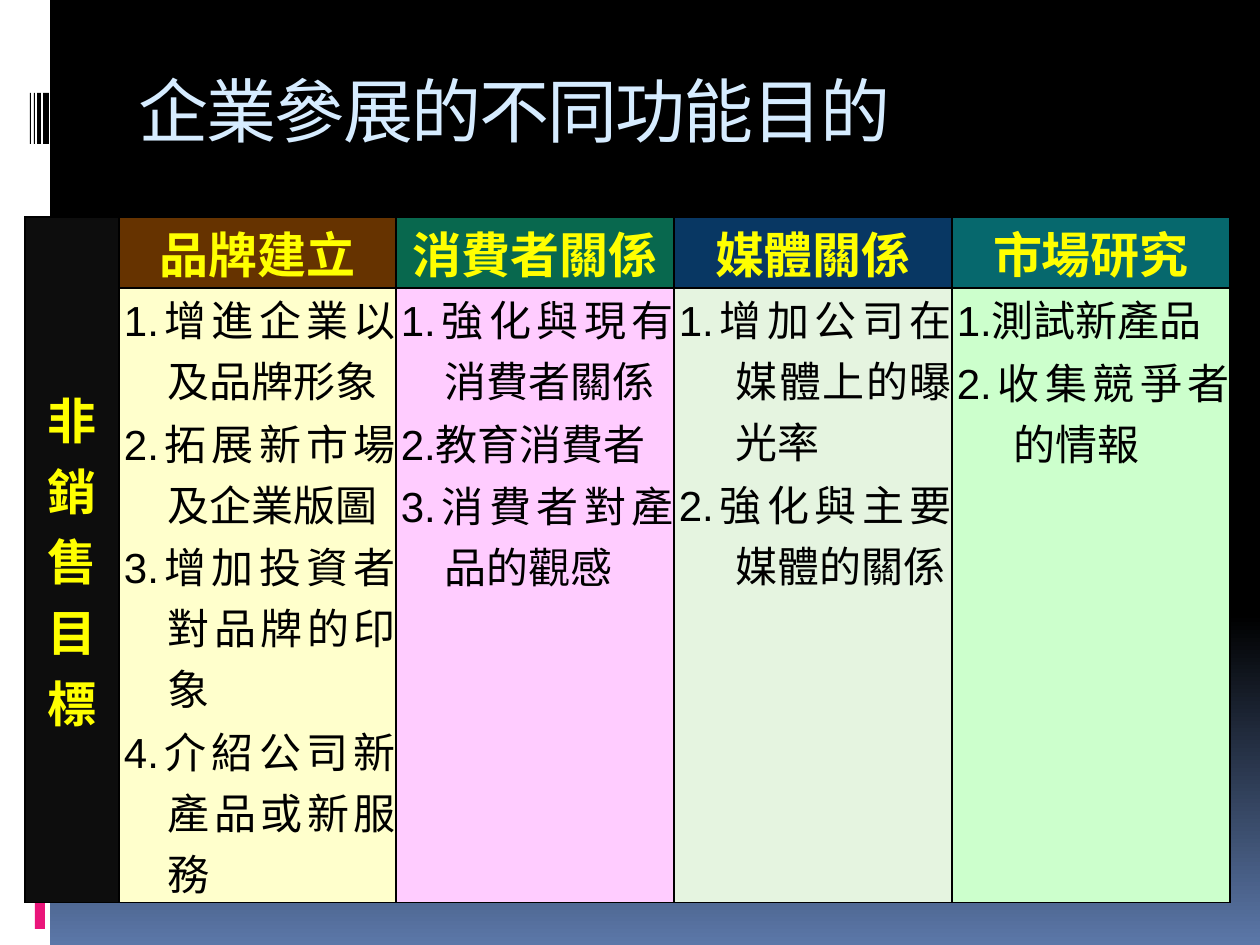
from dataclasses import dataclass

import pptx
import pptx.dml.color
import pptx.enum.shapes
import pptx.enum.text
import pptx.oxml
import pptx.oxml.ns
import pptx.util

EMU_PER_PX = 914400 / 126
ALIGN = pptx.enum.text.PP_ALIGN
ANCHOR = pptx.enum.text.MSO_ANCHOR


def px(length):
    return pptx.util.Emu(round(length * EMU_PER_PX))


def rgb(value):
    return pptx.dml.color.RGBColor.from_string(value)


@dataclass(frozen=True)
class Theme:
    black: str = "000000"
    white: str = "FFFFFF"
    pink: str = "EA157A"
    amber: str = "FEB80A"
    slate: str = "4E5B6F"
    dusk: str = "5B77A8"
    title: str = "D6ECFF"
    heading: str = "FFFF00"
    goal: str = "0D0D0D"
    title_size: int = 40
    heading_size: int = 28
    body_size: int = 24
    title_font: str = "Courier New"
    body_font: str = "Arial"
    asian_font: str = "Noto Sans CJK SC"


@dataclass(frozen=True)
class Column:
    heading: str
    heading_fill: str
    body_fill: str
    left_margin: int
    items: tuple


COLUMNS = [
    Column("品牌建立", "663300", "FFFFCC", 49,
           ("增進企業以及品牌形象", "拓展新市場及企業版圖",
            "增加投資者對品牌的印象", "介紹公司新產品或新服務")),
    Column("消費者關係", "08684E", "FFCCFF", 49,
           ("強化與現有消費者關係", "教育消費者", "消費者對產品的觀感")),
    Column("媒體關係", "083763", "E5F4E0", 62,
           ("增加公司在媒體上的曝光率", "強化與主要媒體的關係")),
    Column("市場研究", "06686D", "CCFFCC", 62,
           ("測試新產品", "收集競爭者的情報")),
]


class SlideBuilder:
    def __init__(self, slide, theme):
        self.slide = slide
        self.theme = theme

    def background(self):
        fill = self.slide.background.fill
        fill.gradient()
        fill.gradient_angle = 270
        stops = ((0.65, self.theme.black), (1.0, self.theme.dusk))
        for stop, (position, color) in zip(fill.gradient_stops, stops):
            stop.position = position
            stop.color.rgb = rgb(color)

    def rectangle(self, left, top, width, height, color):
        shape = self.slide.shapes.add_shape(
            pptx.enum.shapes.MSO_SHAPE.RECTANGLE,
            px(left), px(top), px(width), px(height))
        shape.shadow.inherit = False
        shape.fill.solid()
        shape.fill.fore_color.rgb = rgb(color)
        shape.line.fill.background()

    def style(self, paragraph, font_name, size, color, bold=False, spacing=0):
        font = paragraph.font
        font.name = font_name
        font.size = pptx.util.Pt(size)
        font.bold = bold
        font.color.rgb = rgb(color)
        properties = paragraph._p.pPr.find(pptx.oxml.ns.qn("a:defRPr"))
        if spacing:
            properties.set("spc", str(spacing * 100))
        properties.append(pptx.oxml.parse_xml(
            f'<a:ea {pptx.oxml.ns.nsdecls("a")} typeface="{self.theme.asian_font}"/>'))

    def title(self, text, left, top, width, height):
        shape = self.slide.shapes.title
        shape.left, shape.top = px(left), px(top)
        shape.width, shape.height = px(width), px(height)
        frame = shape.text_frame
        frame.text = text
        frame.auto_size = pptx.enum.text.MSO_AUTO_SIZE.NONE
        frame.vertical_anchor = ANCHOR.TOP
        paragraph = frame.paragraphs[0]
        paragraph.alignment = ALIGN.LEFT
        paragraph.line_spacing = 0.9
        self.style(paragraph, self.theme.title_font, self.theme.title_size,
                   self.theme.title, spacing=-1)

    def table(self, left, top, widths, heights):
        table = self.slide.shapes.add_table(
            len(heights), len(widths), px(left), px(top),
            px(sum(widths)), px(sum(heights))).table
        table.first_row = table.horz_banding = False
        for column, width in zip(table.columns, widths):
            column.width = px(width)
        for row, height in zip(table.rows, heights):
            row.height = px(height)
        for cell in table.iter_cells():
            self.borders(cell)
        return table

    def borders(self, cell):
        properties = cell._tc.get_or_add_tcPr()
        for side in ("lnL", "lnR", "lnT", "lnB"):
            properties.append(pptx.oxml.parse_xml(
                f'<a:{side} {pptx.oxml.ns.nsdecls("a")} w="12700"><a:solidFill>'
                f'<a:srgbClr val="{self.theme.black}"/></a:solidFill></a:{side}>'))

    def cell(self, cell, lines, color):
        """Fill a cell without insets and return its paragraphs."""
        cell.margin_left = cell.margin_right = 0
        cell.margin_top = cell.margin_bottom = 0
        cell.fill.solid()
        cell.fill.fore_color.rgb = rgb(color)
        cell.text = "\n".join(lines)
        return cell.text_frame.paragraphs

    def heading_cell(self, cell, text, color):
        for paragraph in self.cell(cell, [text], color):
            paragraph.alignment = ALIGN.CENTER
            self.style(paragraph, self.theme.asian_font, self.theme.heading_size,
                       self.theme.heading, bold=True)

    def list_cell(self, cell, items, color, left_margin):
        lines = [f"{number}.{item}" for number, item in enumerate(items, 1)]
        for paragraph in self.cell(cell, lines, color):
            paragraph.alignment = ALIGN.JUSTIFY
            paragraph.space_before = pptx.util.Pt(1)
            properties = paragraph._p.get_or_add_pPr()
            properties.set("marL", str(px(left_margin)))
            properties.set("indent", str(px(5 - left_margin)))
            self.style(paragraph, self.theme.body_font, self.theme.body_size,
                       self.theme.black)


def main():
    presentation = pptx.Presentation()
    presentation.slide_width, presentation.slide_height = px(1260), px(945)
    slide = presentation.slides.add_slide(presentation.slide_layouts[5])
    theme = Theme()
    builder = SlideBuilder(slide, theme)

    builder.background()
    builder.rectangle(0, 0, 50, 945, theme.white)
    for top, height, color in ((696, 233, theme.pink), (662, 31, theme.amber),
                               (639, 19, theme.slate), (626, 10, theme.pink)):
        builder.rectangle(35, top, 10, height, color)
    for left, width in ((43, 6), (37, 4), (34, 1), (30, 1)):
        builder.rectangle(left, 93, width, 51, theme.black)

    builder.title("企業參展的不同功能目的", 126, 71, 1071, 126)

    table = builder.table(25, 217, (94, 277, 278, 278, 278), (71, 614))
    goal = table.cell(0, 0)
    goal.merge(table.cell(1, 0))
    builder.heading_cell(goal, "非銷售目標", theme.goal)
    goal.vertical_anchor = ANCHOR.MIDDLE
    for index, column in enumerate(COLUMNS, 1):
        builder.heading_cell(table.cell(0, index), column.heading, column.heading_fill)
        builder.list_cell(table.cell(1, index), column.items, column.body_fill,
                          column.left_margin)

    presentation.save("out.pptx")


if __name__ == "__main__":
    main()
